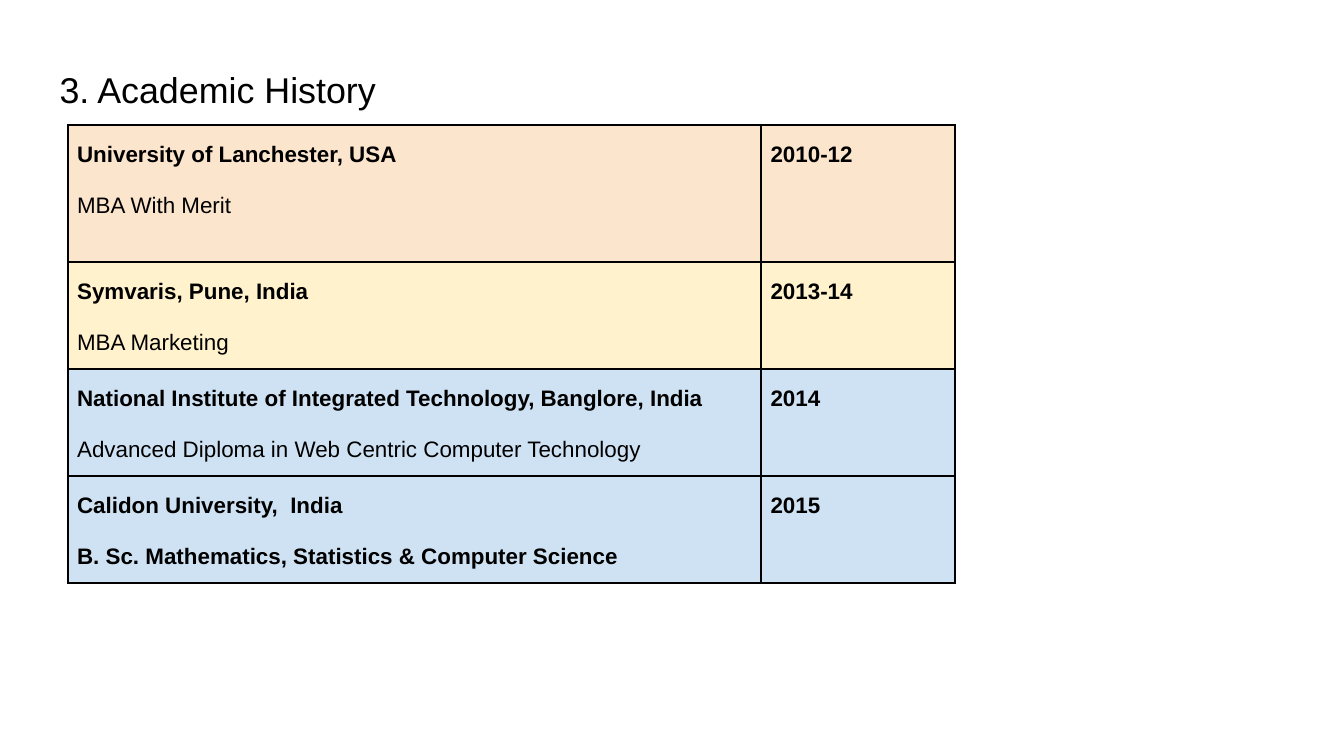
from dataclasses import dataclass

from pptx import Presentation
from pptx import util as u
from pptx.dml.color import RGBColor
from pptx.enum import text
from pptx.oxml import ns
from lxml import etree


@dataclass(frozen=True)
class Theme:
    font: str = "Arial"
    title: float = 19.2
    body: float = 12
    ink: str = "000000"
    peach: str = "FCE5CD"
    cream: str = "FFF2CC"
    sky: str = "CFE2F3"
    border: float = 1


T = Theme()
W = u.Inches(10)
H = W * 9 // 16
COLS = (5.16, 1.44)
ROWS = (1.02, 0.79, 0.79, 0.79)
HISTORY = (
    ("University of Lanchester, USA", "MBA With Merit", False, "2010-12", T.peach),
    ("Symvaris, Pune, India", "MBA Marketing", False, "2013-14", T.cream),
    ("National Institute of Integrated Technology, Banglore, India",
     "Advanced Diploma in Web Centric Computer Technology", False, "2014", T.sky),
    ("Calidon University,  India",
     "B. Sc. Mathematics, Statistics & Computer Science", True, "2015", T.sky),
)


def share(length, percent):
    return round(length * percent / 100)


def add_run(p, words, size, bold=False):
    r = p.add_run()
    r.text = words
    r.font.name = T.font
    r.font.size = u.Pt(size)
    r.font.bold = bold
    r.font.color.rgb = RGBColor.from_string(T.ink)


def add_title(s, words):
    sp = s.shapes.add_textbox(share(W, 3.45), share(H, 7.15), share(W, 29), share(H, 9.25))
    tf = sp.text_frame
    tf.word_wrap = True
    tf.vertical_anchor = text.MSO_ANCHOR.BOTTOM
    tf.margin_left = tf.margin_right = tf.margin_top = tf.margin_bottom = u.Inches(0.1)
    add_run(tf.paragraphs[0], words, T.title)


def set_borders(cell):
    tc_pr = cell._tc.get_or_add_tcPr()
    for side in ("a:lnL", "a:lnR", "a:lnT", "a:lnB"):
        ln = etree.SubElement(tc_pr, ns.qn(side), w=str(u.Pt(T.border)))
        fill = etree.SubElement(ln, ns.qn("a:solidFill"))
        etree.SubElement(fill, ns.qn("a:srgbClr"), val=T.ink)


def fill_cell(cell, color, lines):
    set_borders(cell)
    cell.fill.solid()
    cell.fill.fore_color.rgb = RGBColor.from_string(color)
    cell.margin_left = cell.margin_right = cell.margin_bottom = u.Inches(0.07)
    cell.margin_top = u.Inches(0.1)
    tf = cell.text_frame
    for i, (words, bold) in enumerate(lines):
        p = tf.add_paragraph() if i else tf.paragraphs[0]
        p.alignment = text.PP_ALIGN.JUSTIFY
        p.line_spacing = 1.15
        p.space_before = u.Pt(12)
        add_run(p, words, T.body, bold)


def add_history(s):
    frame = s.shapes.add_table(len(ROWS), len(COLS), share(W, 5.04), share(H, 16.5),
                               u.Inches(sum(COLS)), u.Inches(sum(ROWS)))
    table = frame.table
    table.first_row = table.horz_banding = False
    for column, width in zip(table.columns, COLS):
        column.width = u.Inches(width)
    for row, height, entry in zip(table.rows, ROWS, HISTORY):
        school, degree, degree_bold, years, color = entry
        row.height = u.Inches(height)
        fill_cell(row.cells[0], color, ((school, True), (degree, degree_bold)))
        fill_cell(row.cells[1], color, ((years, True),))


def main():
    prs = Presentation()
    prs.slide_width, prs.slide_height = W, H
    s = prs.slides.add_slide(prs.slide_layouts[6])
    add_title(s, "3. Academic History")
    add_history(s)
    prs.save("out.pptx")


if __name__ == "__main__":
    main()
